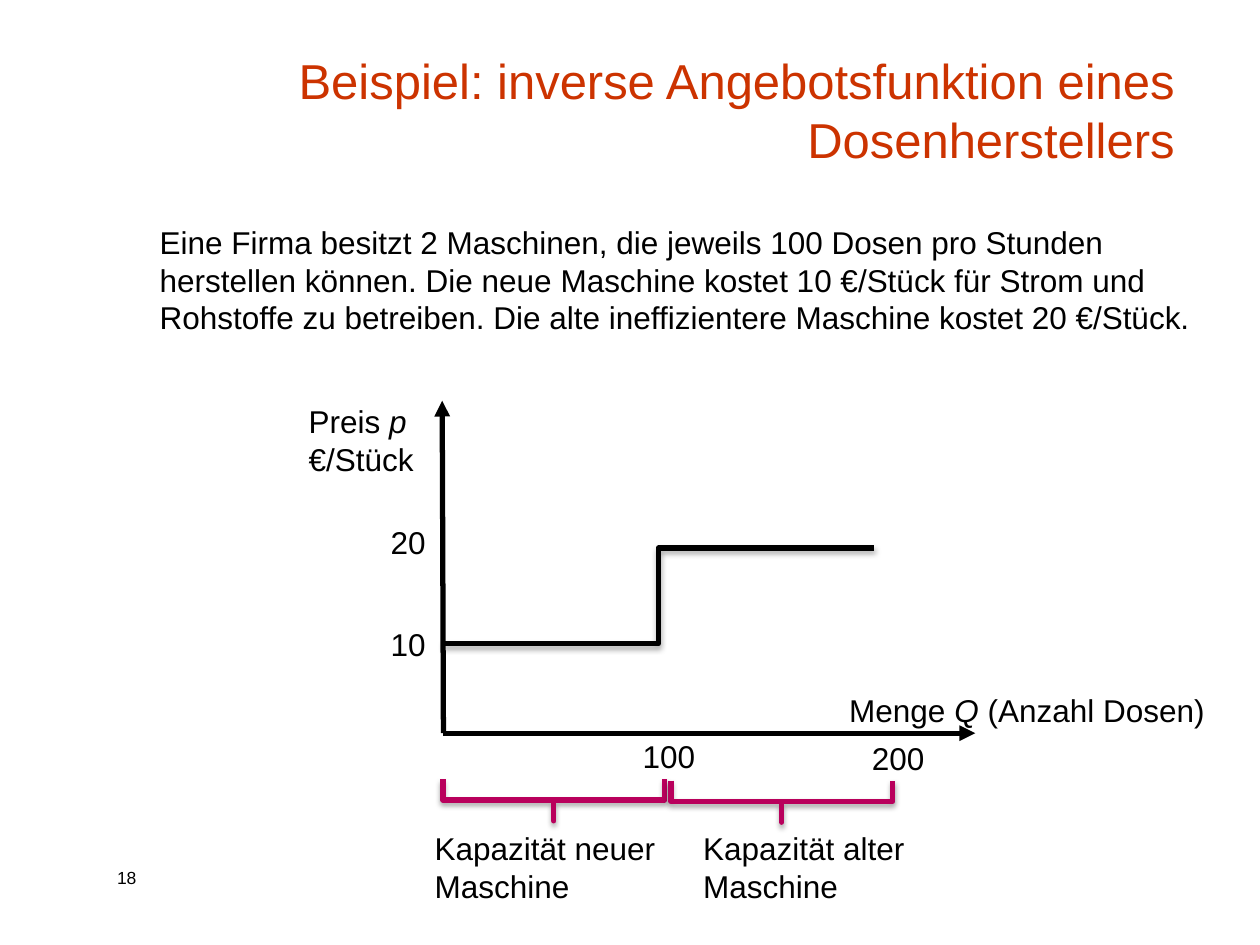
from lxml.etree import SubElement
from pptx import Presentation
from pptx.dml.color import RGBColor
from pptx.enum.shapes import MSO_CONNECTOR as Link, MSO_SHAPE as Shape
from pptx.enum.text import MSO_ANCHOR as Anchor, MSO_AUTO_SIZE as AutoSize, PP_ALIGN as Align
from pptx.oxml.ns import qn
from pptx.util import Pt

BLACK = RGBColor(0x00, 0x00, 0x00)
TITLE_RED = RGBColor(0xCC, 0x33, 0x00)
BRACE_PINK = RGBColor(0xB9, 0x00, 0x5C)
FONT = "Arial"
LINE_WIDTH = 3
ORIGIN = (253.4, 419)


def add_run(paragraph, text, size=18, color=BLACK, italic=False):
    """Append one formatted run to a paragraph."""
    run = paragraph.add_run()
    run.text = text
    run.font.name = FONT
    run.font.size = Pt(size)
    run.font.italic = italic
    run.font.color.rgb = color


def add_title(slide, text):
    """Place and fill the title placeholder."""
    title = slide.shapes.title
    title.left, title.top, title.width, title.height = Pt(150.5), Pt(30.2), Pt(527.8), Pt(69.8)
    frame = title.text_frame
    frame.auto_size = AutoSize.NONE
    frame.vertical_anchor = Anchor.BOTTOM
    frame.paragraphs[0].alignment = Align.RIGHT
    add_run(frame.paragraphs[0], text, 28, TITLE_RED)


def add_text(slide, box, lines, size=18, inset=(0, 0)):
    """Add a text box whose lines are lists of (text, italic) runs."""
    frame = slide.shapes.add_textbox(*map(Pt, box)).text_frame
    frame.word_wrap = True
    frame.margin_left = frame.margin_right = Pt(inset[0])
    frame.margin_top = frame.margin_bottom = Pt(inset[1])
    for index, runs in enumerate(lines):
        paragraph = frame.add_paragraph() if index else frame.paragraphs[0]
        for text, italic in runs:
            add_run(paragraph, text, size, italic=italic)


def add_shadow(effects):
    """Put a soft downward shadow into an effect list."""
    shadow = SubElement(effects, qn("a:outerShdw"), blurRad=str(Pt(3.1)), dist=str(Pt(1.8)),
                        dir="5400000", rotWithShape="0")
    black = SubElement(shadow, qn("a:srgbClr"), val=str(BLACK))
    SubElement(black, qn("a:alpha"), val="35000")


def add_line(slide, kind, start, end):
    """Add a black connector and return it with its empty effect list."""
    line = slide.shapes.add_connector(kind, *map(Pt, start + end))
    line.line.color.rgb = BLACK
    line.line.width = Pt(LINE_WIDTH)
    effects = SubElement(line._element.spPr, qn("a:effectLst"))
    return line, effects


def add_axis(slide, end):
    """Draw an arrow from the origin of the diagram."""
    axis, _ = add_line(slide, Link.STRAIGHT, ORIGIN, end)
    SubElement(axis.line._get_or_add_ln(), qn("a:tailEnd"), type="triangle")


def add_supply_curve(slide, start, end):
    """Draw the stepped supply curve."""
    _, effects = add_line(slide, Link.ELBOW, start, end)
    add_shadow(effects)


def add_capacity_brace(slide, left, top):
    """Draw a square brace opening upwards below the quantity axis."""
    brace = slide.shapes.add_shape(Shape.LEFT_BRACE, Pt(left), Pt(top), Pt(23.8), Pt(126.7))
    brace.adjustments[0] = 0
    brace.adjustments[1] = 0.5
    brace.rotation = 90
    brace._element.spPr.find(qn("a:xfrm")).set("flipH", "1")
    brace.fill.background()
    brace.line.color.rgb = BRACE_PINK
    brace.line.width = Pt(LINE_WIDTH)
    brace.shadow.inherit = False
    add_shadow(brace._element.spPr.find(qn("a:effectLst")))


def main():
    """Build the slide and save it."""
    deck = Presentation()
    deck.slide_width, deck.slide_height = Pt(720), Pt(540)
    slide = deck.slides.add_slide(deck.slide_layouts[5])

    add_title(slide, "Beispiel: inverse Angebotsfunktion eines Dosenherstellers")
    add_text(slide, (59.8, 491.8, 48.2, 19.4), [[("18", False)]], 10, (7.2, 3.6))
    add_text(slide, (84.2, 123.8, 614.2, 72.7), [[(
        "Eine Firma besitzt 2 Maschinen, die jeweils 100 Dosen pro Stunden herstellen können. "
        "Die neue Maschine kostet 10 €/Stück für Strom und Rohstoffe zu betreiben. "
        "Die alte ineffizientere Maschine kostet 20 €/Stück.", False)]], inset=(7.2, 3.6))

    add_text(slide, (176.4, 229.7, 93.6, 43.9),
             [[("Preis", False), (" p", True)], [("€/Stück", False)]])
    add_text(slide, (485.3, 394.6, 221, 21.6),
             [[("Menge", False), (" Q ", True), ("(Anzahl Dosen)", False)]])
    for axis_end in ((557.3, ORIGIN[1]), (252.7, 229)):
        add_axis(slide, axis_end)
    add_supply_curve(slide, (252.7, 367.9), (499.7, 313.2))

    ticks = (("20", 223.2, 298.8), ("10", 223.2, 357.1), ("100", 367.2, 421.2), ("200", 498.2, 422.6))
    for value, left, top in ticks:
        add_text(slide, (left, top, 93.6, 21.6), [[(value, False)]])

    for left, top in ((304.6, 393.8), (434.9, 394.6)):
        add_capacity_brace(slide, left, top)
    capacities = (("Kapazität neuer Maschine", 248.4, 128.2), ("Kapazität alter Maschine", 401.8, 118.8))
    for caption, left, width in capacities:
        add_text(slide, (left, 473.8, width, 43.9), [[(caption, False)]])

    deck.save("out.pptx")


if __name__ == "__main__":
    main()
